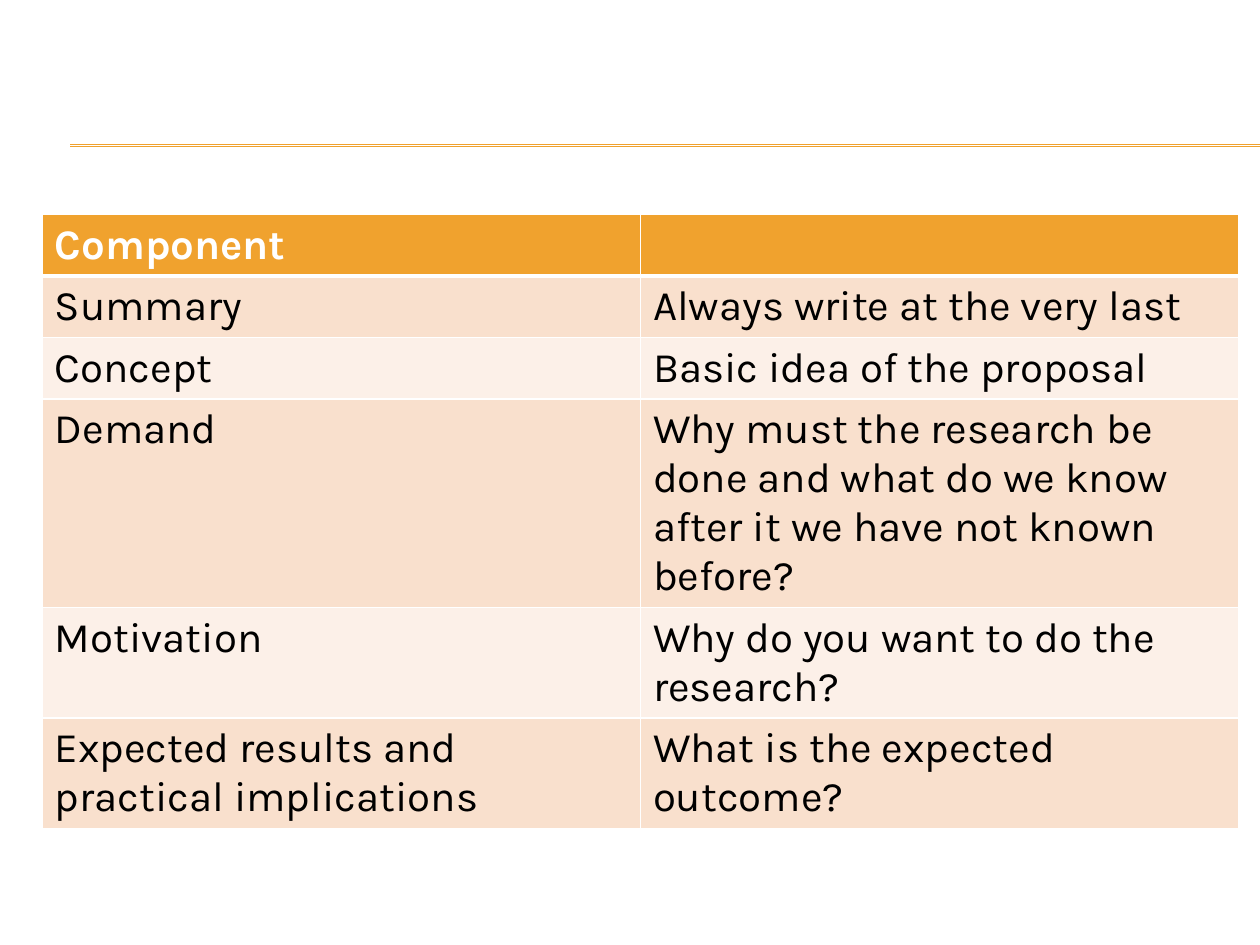
from pptx import Presentation
from pptx.dml.color import RGBColor
from pptx.enum.shapes import MSO_CONNECTOR
from pptx.oxml import parse_xml
from pptx.oxml.ns import nsdecls, qn
from pptx.util import Cm, Pt

# Content
ROWS = [
    ("Component", ""),
    ("Summary", "Always write at the very last"),
    ("Concept", "Basic idea of the proposal"),
    ("Demand", "Why must the research be done and what do we know "
               "after it we have not known before?"),
    ("Motivation", "Why do you want to do the research?"),
    ("Expected results and practical implications",
     "What is the expected outcome?"),
]
LINES_PER_ROW = (1, 1, 1, 4, 2, 2)

THEME = {
    "font": "Karla", "size": Pt(24),
    "accent": "F0A22E", "bands": ("F9E0CD", "FCF0E8"),
    "light": "FFFFFF", "dark": "000000",
    "rule": Pt(0.75), "border": Pt(1), "header_border": Pt(3),
}

# Geometry in centimetres
PAGE_WIDTH, PAGE_HEIGHT = 25.4, 19.05
RULE_LEFT, RULE_TOPS = 1.42, (2.92, 2.95)
TABLE_LEFT, TABLE_TOP, COLUMN_WIDTH = 0.85, 4.32, 12.06
CELL_PADDING, LINE_HEIGHT = 0.25, 0.98


def color(name):
    return RGBColor.from_string(name)


def add_rule(page, top):
    rule = page.shapes.add_connector(
        MSO_CONNECTOR.STRAIGHT, Cm(RULE_LEFT), Cm(top), Cm(PAGE_WIDTH), Cm(top))
    rule.line.color.rgb = color(THEME["accent"])
    rule.line.width = THEME["rule"]
    rule._element.spPr.append(parse_xml(f"<a:effectLst {nsdecls('a')}/>"))


def set_borders(cell, top, bottom):
    widths = {"lnL": THEME["border"], "lnR": THEME["border"],
              "lnT": top, "lnB": bottom}
    properties = cell._tc.get_or_add_tcPr()
    for position, (side, width) in enumerate(widths.items()):
        properties.insert(position, parse_xml(
            f'<a:{side} {nsdecls("a")} w="{width}"><a:solidFill>'
            f'<a:srgbClr val="{THEME["light"]}"/></a:solidFill></a:{side}>'))


def format_cell(cell, text, row):
    header = row == 0
    fill = THEME["accent"] if header else THEME["bands"][(row - 1) % 2]
    cell.fill.solid()
    cell.fill.fore_color.rgb = color(fill)
    set_borders(cell,
                top=THEME["header_border"] if row == 1 else THEME["border"],
                bottom=THEME["header_border"] if header else THEME["border"])
    cell.text = text
    font = cell.text_frame.paragraphs[0].font
    font.name, font.size, font.bold = THEME["font"], THEME["size"], header
    font.color.rgb = color(THEME["light"] if header else THEME["dark"])


def add_component_table(page):
    heights = [Cm(CELL_PADDING + LINE_HEIGHT * lines) for lines in LINES_PER_ROW]
    columns = len(ROWS[0])
    table = page.shapes.add_table(
        len(ROWS), columns, Cm(TABLE_LEFT), Cm(TABLE_TOP),
        Cm(COLUMN_WIDTH * columns), sum(heights)).table
    for column in table.columns:
        column.width = Cm(COLUMN_WIDTH)
    for row, (texts, height) in enumerate(zip(ROWS, heights)):
        table.rows[row].height = height
        for column, text in enumerate(texts):
            format_cell(table.cell(row, column), text, row)


def main():
    deck = Presentation()
    deck.slide_width, deck.slide_height = Cm(PAGE_WIDTH), Cm(PAGE_HEIGHT)
    page = deck.slides.add_slide(deck.slide_layouts[6])

    # Double rule above the table
    for top in RULE_TOPS:
        add_rule(page, top)

    # Proposal components
    add_component_table(page)
    deck.save("out.pptx")


if __name__ == "__main__":
    main()
